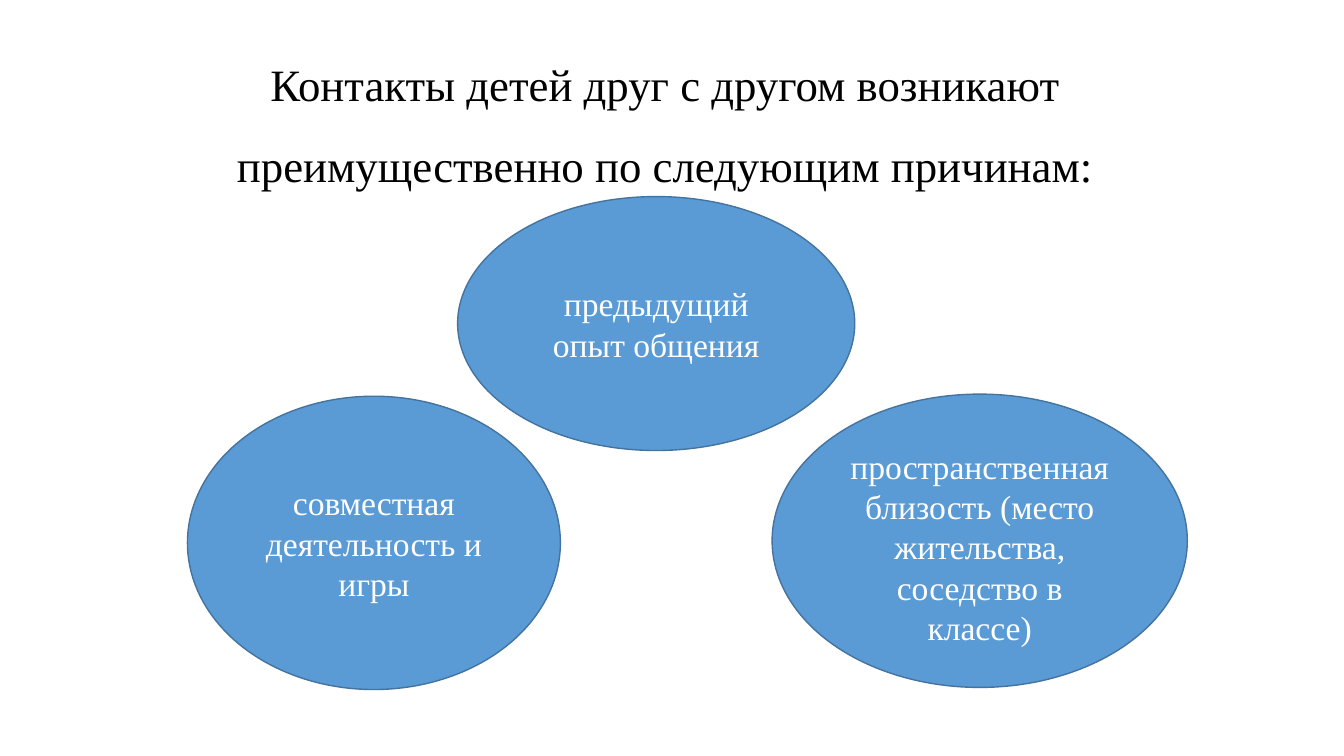
from pptx import Presentation
from pptx.dml.color import RGBColor
from pptx.enum.shapes import MSO_SHAPE
from pptx.enum.text import MSO_ANCHOR, PP_ALIGN
from pptx.util import Pt


def tint(code):
    return RGBColor.from_string(code)


def write(shape, text, size, color):
    """Fill the shape with one centred, wrapped paragraph."""
    frame = shape.text_frame
    frame.word_wrap = True
    frame.vertical_anchor = MSO_ANCHOR.MIDDLE
    para = frame.paragraphs[0]
    para.alignment = PP_ALIGN.CENTER
    run = para.add_run()
    run.text = text
    run.font.name = "Times New Roman"
    run.font.size = Pt(size)
    run.font.color.rgb = tint(color)
    return frame


deck = Presentation()
deck.slide_width, deck.slide_height = Pt(960), Pt(540)
slide = deck.slides.add_slide(deck.slide_layouts[6])

title = slide.shapes.add_textbox(Pt(122.4), Pt(15.84), Pt(705.6), Pt(126))
head = write(
    title,
    "Контакты детей друг с другом возникают преимущественно по следующим причинам:",
    32, "000000")
head.paragraphs[0].line_spacing = 1.5

# Left, top, width, height, top and bottom inset, text
causes = [
    (326.9, 140.4, 283.7, 181.4, 3.6, 3.6, "предыдущий опыт общения"),
    (551.5, 281.5, 296.6, 209.5, 8, 0,
     "пространственная близость (место жительства, соседство в классе)"),
    (133.9, 283, 266.4, 209.5, 3.6, 3.6, "совместная деятельность и игры"),
]
for left, top, width, height, above, below, text in causes:
    oval = slide.shapes.add_shape(
        MSO_SHAPE.OVAL, Pt(left), Pt(top), Pt(width), Pt(height))
    oval.shadow.inherit = False
    oval.fill.solid()
    oval.fill.fore_color.rgb = tint("5B9BD5")
    oval.line.color.rgb = tint("43739E")
    oval.line.width = Pt(1)
    frame = write(oval, text, 24, "FFFFFF")
    frame.margin_top, frame.margin_bottom = Pt(above), Pt(below)

deck.save("out.pptx")
